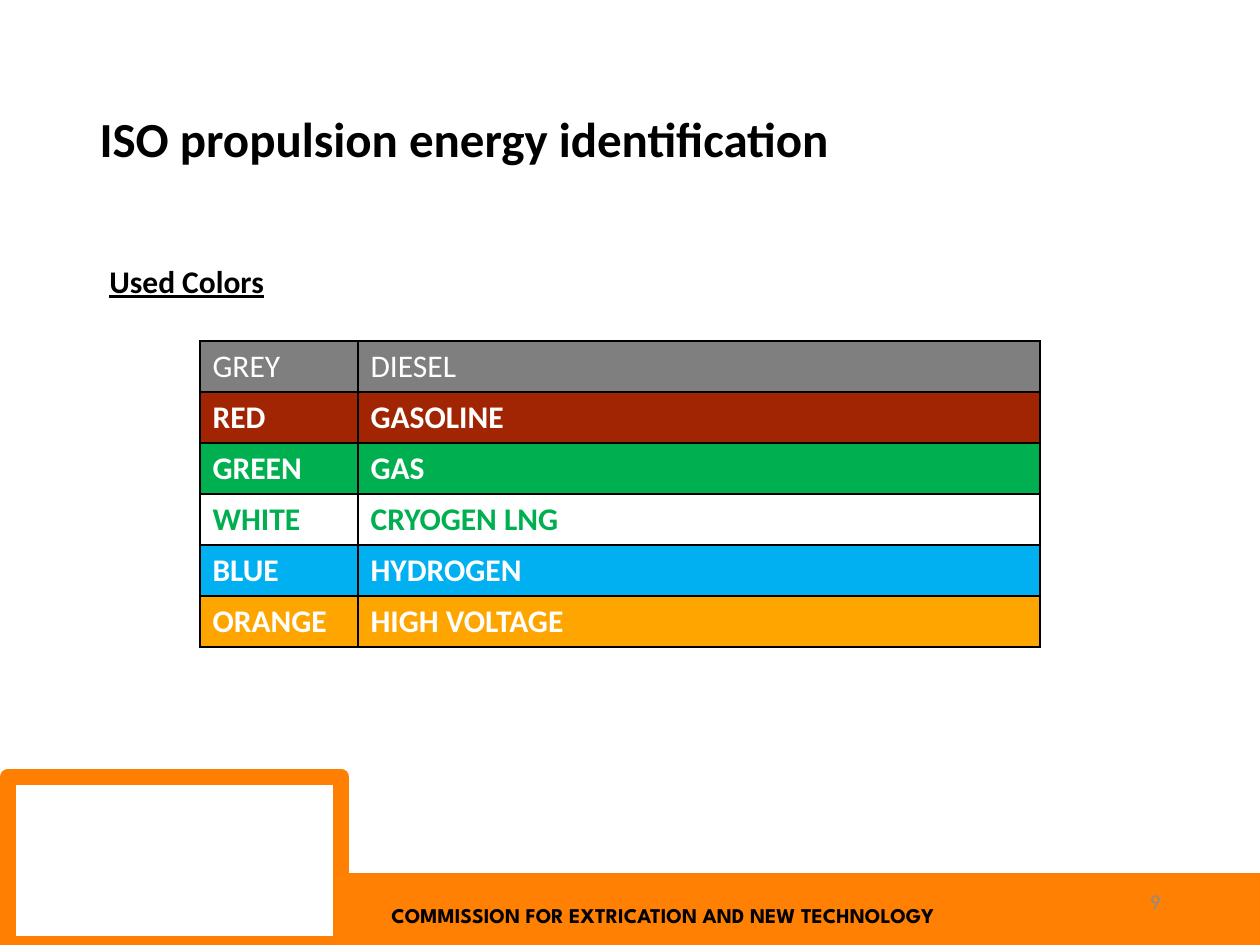
from lxml import etree
from pptx import Presentation
from pptx.dml.color import RGBColor
from pptx.enum.shapes import MSO_SHAPE
from pptx.enum.text import MSO_ANCHOR, PP_ALIGN
from pptx.oxml.ns import qn
from pptx.util import Pt

RECTANGLE = MSO_SHAPE.RECTANGLE
TOP, MIDDLE = MSO_ANCHOR.TOP, MSO_ANCHOR.MIDDLE
LEFT, RIGHT = PP_ALIGN.LEFT, PP_ALIGN.RIGHT

PX_PER_INCH = 126
EMU_PER_PX = 914400 / PX_PER_INCH

BLACK, WHITE, GREEN = "000000", "FFFFFF", "00B050"
ORANGE = "FF8003"

# Colour name, energy, fill, text colour, bold
ENERGIES = [
    ("GREY", "DIESEL", "7F7F7F", WHITE, False),
    ("RED", "GASOLINE", "A12503", WHITE, True),
    ("GREEN", "GAS", GREEN, WHITE, True),
    ("WHITE", "CRYOGEN LNG", WHITE, GREEN, True),
    ("BLUE", "HYDROGEN", "00B0F0", WHITE, True),
    ("ORANGE", "HIGH VOLTAGE", "FFA500", WHITE, True),
]
COLUMN_WIDTHS = (158, 682)
ROW_HEIGHT = 51


def px(length):
    return round(length * EMU_PER_PX)


def box(left, top, width, height):
    return px(left), px(top), px(width), px(height)


def rgb(color):
    return RGBColor.from_string(color)


def write(frame, text, size, color=BLACK, align=LEFT, spacing=1.0, **formats):
    paragraph = frame.paragraphs[0]
    paragraph.alignment = align
    paragraph.line_spacing = spacing
    run = paragraph.add_run()
    run.text = text
    run.font.color.rgb = rgb(color)
    for name, value in {"name": "Calibri", "size": Pt(size), **formats}.items():
        setattr(run.font, name, value)


def add_text(slide, place, text, size, anchor=TOP, **formats):
    frame = slide.shapes.add_textbox(*box(*place)).text_frame
    frame.word_wrap = True
    frame.vertical_anchor = anchor
    write(frame, text, size, **formats)


def add_block(slide, place, fill, line, line_width):
    block = slide.shapes.add_shape(RECTANGLE, *box(*place))
    block.shadow.inherit = False
    block.fill.solid()
    block.fill.fore_color.rgb = rgb(fill)
    block.line.color.rgb = rgb(line)
    block.line.width = Pt(line_width)


def set_title(slide, place, text):
    title = slide.shapes.title
    title.left, title.top, title.width, title.height = box(*place)
    title.text_frame.vertical_anchor = MIDDLE
    write(title.text_frame, text, 28, spacing=0.9, bold=True)


def border_cell(cell, color, width):
    properties = cell._tc.get_or_add_tcPr()
    for side in ("a:lnL", "a:lnR", "a:lnT", "a:lnB"):
        line = etree.SubElement(properties, qn(side), w=str(Pt(width)))
        fill = etree.SubElement(line, qn("a:solidFill"))
        etree.SubElement(fill, qn("a:srgbClr"), val=color)


def add_energy_table(slide, left, top):
    place = box(left, top, sum(COLUMN_WIDTHS), ROW_HEIGHT * len(ENERGIES))
    table = slide.shapes.add_table(
        len(ENERGIES), len(COLUMN_WIDTHS), *place).table
    table.first_row = table.horz_banding = False
    for column, width in zip(table.columns, COLUMN_WIDTHS):
        column.width = px(width)
    for row, (*labels, fill, color, bold) in zip(table.rows, ENERGIES):
        row.height = px(ROW_HEIGHT)
        for cell, label in zip(row.cells, labels):
            border_cell(cell, BLACK, 1)
            cell.fill.solid()
            cell.fill.fore_color.rgb = rgb(fill)
            write(cell.text_frame, label, 18, color, bold=bold)


def main():
    deck = Presentation()
    deck.slide_width, deck.slide_height = px(1260), px(945)
    slide = deck.slides.add_slide(deck.slide_layouts[5])

    # Footer band with the framed panel
    add_block(slide, (8, 777, 333, 167), WHITE, "FE7F02", 9.25)
    add_block(slide, (334, 874, 926, 78), ORANGE, "FF8001", 1)
    add_text(slide, (379, 896, 674, 38),
             "COMMISSION FOR EXTRICATION AND NEW TECHNOLOGY", 12,
             name="League Spartan", bold=True)
    add_text(slide, (890, 876, 283, 50), "9", 12, anchor=MIDDLE,
             color="8C8C8C", align=RIGHT)

    # Title and subheading
    set_title(slide, (87, 50, 1086, 183), "ISO propulsion energy identification")
    add_text(slide, (97, 260, 1086, 600), "Used Colors", 18, spacing=0.9,
             bold=True, underline=True)

    # Colour code of each energy
    add_energy_table(slide, 200, 341)

    deck.save("out.pptx")


if __name__ == "__main__":
    main()
